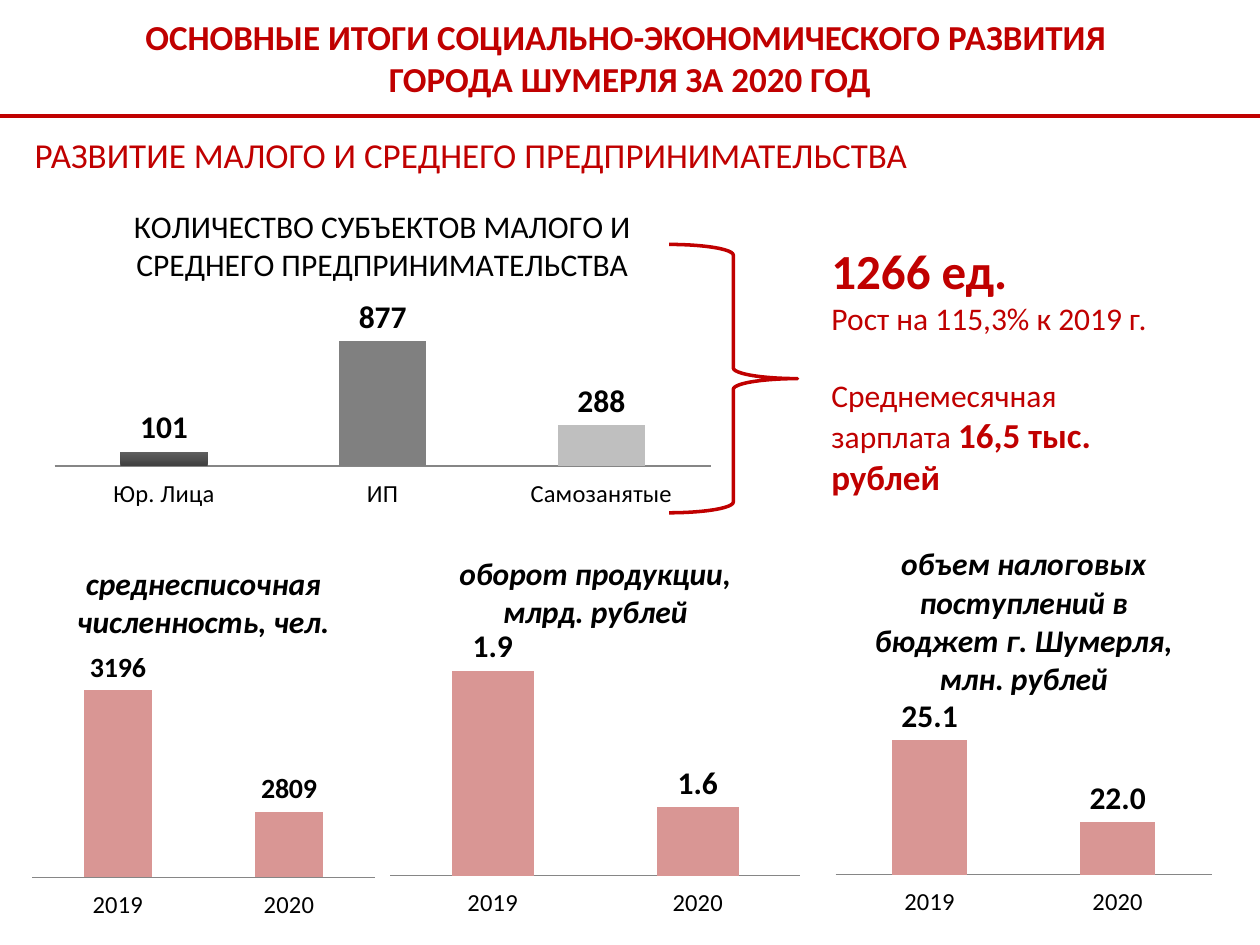
"""Build a slide on small and medium business results for 2020."""
from dataclasses import dataclass

from lxml.etree import SubElement
from pptx import Presentation
from pptx.chart.data import CategoryChartData
from pptx.dml.color import RGBColor
from pptx.enum.chart import XL_CHART_TYPE, XL_LABEL_POSITION, XL_TICK_LABEL_POSITION, XL_TICK_MARK
from pptx.enum.shapes import MSO_CONNECTOR, MSO_SHAPE
from pptx.enum.text import MSO_ANCHOR, PP_ALIGN
from pptx.oxml.ns import qn
from pptx.util import Inches, Pt

RED, BLACK, PINK = "C00000", "000000", "D99694"
FONT = "Calibri"
YEARS = ("2019", "2020")


@dataclass
class Bars:
    title: str
    box: tuple[float, float, float, float]
    plot: tuple[float, float, float, float]
    cats: tuple[str, ...]
    vals: tuple[float, ...]
    low: float
    high: float
    label: int = 18
    form: str = "General"
    strong: bool = True


CHARTS = (
    Bars("КОЛИЧЕСТВО СУБЪЕКТОВ МАЛОГО И СРЕДНЕГО ПРЕДПРИНИМАТЕЛЬСТВА",
         (0.28, 1.47, 5.51, 2.68), (0.028, 0.41, 0.945, 0.422),
         ("Юр. Лица", "ИП", "Самозанятые"), (101, 877, 288), 0, 1000, strong=False),
    Bars("среднесписочная численность, чел.",
         (0.2, 4.3, 2.83, 3), (0.02, 0.39, 0.96, 0.5),
         YEARS, (3196, 2809), 2600, 3200, label=16),
    Bars("оборот продукции, млрд. рублей",
         (3.03, 4.22, 3.39, 3.07), (0.02, 0.3, 0.96, 0.59),
         YEARS, (1.9, 1.6), 1.45, 1.95, form="0.0"),
    Bars("объем налоговых поступлений в бюджет г. Шумерля, млн. рублей",
         (6.57, 4.14, 3.11, 3.15), (0.02, 0.49, 0.96, 0.4),
         YEARS, (25.1, 22), 20, 26, form="0.0"),
)


def tint(code: str) -> RGBColor:
    return RGBColor.from_string(code)


def style(font, size: float, code: str, bold: bool = False, slant: bool = False) -> None:
    font.name, font.size, font.bold, font.italic = FONT, Pt(size), bold, slant
    font.color.rgb = tint(code)


def place(shape, *box: float) -> None:
    shape.left, shape.top, shape.width, shape.height = map(Inches, box)


def add_text(slide, *box: float):
    frame = slide.shapes.add_textbox(*map(Inches, box)).text_frame
    frame.word_wrap = True
    return frame


def fix_plot(chart, plot: tuple[float, ...]) -> None:
    area = chart.plots[0]._element.getparent()
    for old in area.findall(qn("c:layout")):
        area.remove(old)
    layout = SubElement(area, qn("c:layout"))
    area.insert(0, layout)
    manual = SubElement(layout, qn("c:manualLayout"))
    parts = [("layoutTarget", "inner"), ("xMode", "edge"), ("yMode", "edge")]
    parts += zip("xywh", map(str, plot))
    for tag, val in parts:
        SubElement(manual, qn(f"c:{tag}")).set("val", val)


def add_bars(slide, item: Bars):
    data = CategoryChartData(number_format=item.form)
    data.categories = item.cats
    data.add_series(item.title, item.vals)
    chart = slide.shapes.add_chart(
        XL_CHART_TYPE.COLUMN_CLUSTERED, *map(Inches, item.box), data).chart
    style(chart.font, 10, BLACK)
    chart.has_legend = False
    chart.has_title = True
    head = chart.chart_title
    head.include_in_layout = False
    head.text_frame.text = item.title
    style(head.text_frame.paragraphs[0].runs[0].font, 18, BLACK, item.strong, item.strong)

    base, scale = chart.category_axis, chart.value_axis
    base.major_tick_mark = XL_TICK_MARK.NONE
    base.tick_label_position = XL_TICK_LABEL_POSITION.LOW
    base.format.line.color.rgb = tint("868686")
    style(base.tick_labels.font, 14, BLACK)
    scale.minimum_scale, scale.maximum_scale = item.low, item.high
    scale.has_major_gridlines = scale.visible = False

    plot = chart.plots[0]
    plot.vary_by_categories = False
    plot.gap_width, plot.overlap = 150, -25
    plot.has_data_labels = True
    labels = plot.data_labels
    labels.show_value = True
    labels.position = XL_LABEL_POSITION.OUTSIDE_END
    labels.number_format, labels.number_format_is_linked = item.form, False
    style(labels.font, item.label, BLACK, True)
    row = plot.series[0]
    row.invert_if_negative = False
    row.format.fill.solid()
    row.format.fill.fore_color.rgb = tint(PINK)
    fix_plot(chart, item.plot)
    return chart


def shade(chart) -> None:
    points = chart.plots[0].series[0].points
    fill = points[0].format.fill
    fill.gradient()
    fill.gradient_angle = 90
    for stop, code in zip(fill.gradient_stops, ("404040", "606060")):
        stop.color.rgb = tint(code)
    for index, code in ((1, "808080"), (2, "BFBFBF")):
        fill = points[index].format.fill
        fill.solid()
        fill.fore_color.rgb = tint(code)


def add_heads(slide) -> None:
    title = slide.shapes.title
    place(title, 0, 0, 10, 0.92)
    frame = title.text_frame
    frame.text = "ОСНОВНЫЕ ИТОГИ СОЦИАЛЬНО-ЭКОНОМИЧЕСКОГО РАЗВИТИЯ \nГОРОДА ШУМЕРЛЯ ЗА 2020 ГОД"
    frame.vertical_anchor = MSO_ANCHOR.MIDDLE
    for para in frame.paragraphs:
        para.alignment = PP_ALIGN.CENTER
        style(para.runs[0].font, 20, RED, True)

    rule = slide.shapes.add_connector(
        MSO_CONNECTOR.STRAIGHT, 0, Inches(0.92), Inches(10), Inches(0.92))
    rule.line.color.rgb, rule.line.width = tint(RED), Pt(2.5)
    SubElement(rule._element.spPr, qn("a:effectLst"))

    frame = add_text(slide, 0, 0.99, 7.48, 0.47)
    frame.vertical_anchor = MSO_ANCHOR.MIDDLE
    frame.text = "РАЗВИТИЕ МАЛОГО И СРЕДНЕГО ПРЕДПРИНИМАТЕЛЬСТВА"
    para = frame.paragraphs[0]
    para.alignment = PP_ALIGN.CENTER
    style(para.runs[0].font, 20, RED)


def add_facts(slide) -> None:
    brace = slide.shapes.add_shape(
        MSO_SHAPE.RIGHT_BRACE, *map(Inches, (5.31, 1.94, 1.02, 2.13)))
    brace.shadow.inherit = False
    brace.fill.background()
    brace.line.color.rgb, brace.line.width = tint(RED), Pt(2)

    frame = add_text(slide, 6.5, 1.86, 2.81, 2.15)
    frame.text = "1266 ед.\nРост на 115,3% к 2019 г.\nСреднемесячная зарплата "
    total, growth, wage = frame.paragraphs
    wage.space_before = Pt(22)
    wage.add_run().text = "16,5 тыс. рублей"
    style(total.runs[0].font, 28, RED, True)
    style(growth.runs[0].font, 18, RED)
    style(wage.runs[0].font, 18, RED)
    style(wage.runs[1].font, 20, RED, True)


def main() -> None:
    deck = Presentation()
    deck.slide_width, deck.slide_height = Inches(10), Inches(7.5)
    slide = deck.slides.add_slide(deck.slide_layouts[5])
    add_heads(slide)
    first, *rest = CHARTS
    shade(add_bars(slide, first))
    add_facts(slide)
    for item in rest:
        add_bars(slide, item)
    deck.save("out.pptx")


if __name__ == "__main__":
    main()
